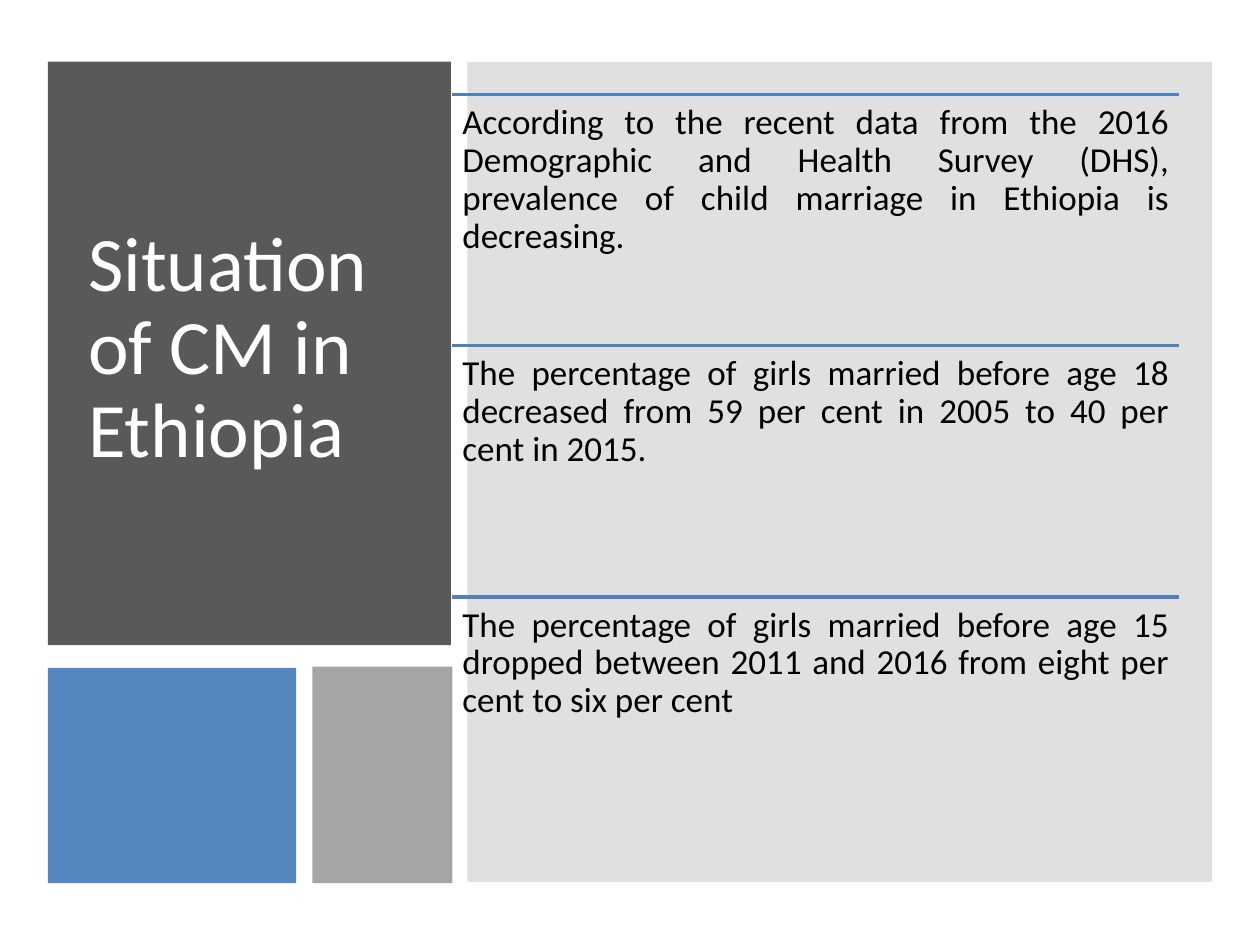
from lxml.etree import SubElement
from pptx import Presentation
from pptx.dml.color import RGBColor
from pptx.enum.shapes import MSO_CONNECTOR as Connector, MSO_SHAPE as Shape
from pptx.enum.text import MSO_ANCHOR as Anchor, PP_ALIGN as Align
from pptx.oxml.ns import qn
from pptx.util import Inches, Pt

# Content
TITLE = "Situation of CM in Ethiopia"
FINDINGS = [
    "According to the recent data from the 2016 Demographic and Health Survey (DHS), "
    "prevalence of child marriage in Ethiopia is decreasing.",
    "The percentage of girls married before age 18 decreased from 59 per cent in 2005 "
    "to 40 per cent in 2015.",
    "The percentage of girls married before age 15 dropped between 2011 and 2016 "
    "from eight per cent to six per cent",
]

THEME = {
    "font": "Calibri", "title_size": 44, "body_size": 20, "rule_width": 2,
    "dark": "595959", "accent": "4F81BD", "gray": "7F7F7F", "silver": "A5A5A5",
    "title": "FFFFFF", "body": "000000",
}

# Panels: colour, opacity in per cent, (left, top, width, height)
PANELS = [
    ("dark", 100, (0.38, 0.49, 3.2, 4.63)),
    ("accent", 95, (0.38, 5.3, 1.97, 1.71)),
    ("gray", 24, (3.71, 0.49, 5.91, 6.51)),
    ("silver", 100, (2.48, 5.29, 1.11, 1.72)),
]
TITLE_BOX = (0.6, 1.22, 2.76, 3.11)
LIST_LEFT, LIST_TOP, LIST_WIDTH, LIST_HEIGHT = 3.59, 0.75, 5.77, 5.98
INSET = 0.08


def color(role):
    return RGBColor.from_string(THEME[role])


def inches(box):
    return [Inches(length) for length in box]


def write(frame, text, role, align, **frame_format):
    frame_format["word_wrap"] = True
    for name, value in frame_format.items():
        setattr(frame, name, value)
    frame.text = text
    paragraph = frame.paragraphs[0]
    paragraph.alignment, paragraph.line_spacing = align, 0.9
    font = paragraph.font
    font.name, font.size = THEME["font"], Pt(THEME[role + "_size"])
    font.color.rgb = color(role)


def add_panel(slide, role, opacity, box):
    panel = slide.shapes.add_shape(Shape.RECTANGLE, *inches(box))
    panel.shadow.inherit = False
    panel.line.fill.background()
    panel.fill.solid()
    panel.fill.fore_color.rgb = color(role)
    if opacity < 100:
        fill = panel._element.spPr.find(qn("a:solidFill"))
        SubElement(fill[0], qn("a:alpha"), val=str(opacity * 1000))


def add_finding(slide, text, top, height):
    rule = slide.shapes.add_connector(
        Connector.STRAIGHT, *inches((LIST_LEFT, top, LIST_LEFT + LIST_WIDTH, top)))
    rule.line.color.rgb = color("accent")
    rule.line.width = Pt(THEME["rule_width"])
    SubElement(rule._element.spPr, qn("a:effectLst"))

    finding = slide.shapes.add_textbox(*inches((LIST_LEFT, top, LIST_WIDTH, height)))
    margins = {"margin_" + side: Inches(INSET)
               for side in ("left", "top", "right", "bottom")}
    write(finding.text_frame, text, "body", Align.JUSTIFY, **margins)


def main():
    deck = Presentation()
    deck.slide_width, deck.slide_height = Inches(10), Inches(7.5)
    slide = deck.slides.add_slide(deck.slide_layouts[5])

    # Background panels
    for panel in PANELS:
        add_panel(slide, *panel)

    # Title, brought in front of the panels
    title = slide.shapes.title
    title.left, title.top, title.width, title.height = inches(TITLE_BOX)
    write(title.text_frame, TITLE, "title", Align.LEFT, vertical_anchor=Anchor.MIDDLE)
    slide.shapes._spTree.append(title._element)

    # Findings, in equal rows under a rule
    row_height = LIST_HEIGHT / len(FINDINGS)
    for row, text in enumerate(FINDINGS):
        add_finding(slide, text, LIST_TOP + row * row_height, row_height)

    deck.save("out.pptx")


if __name__ == "__main__":
    main()
